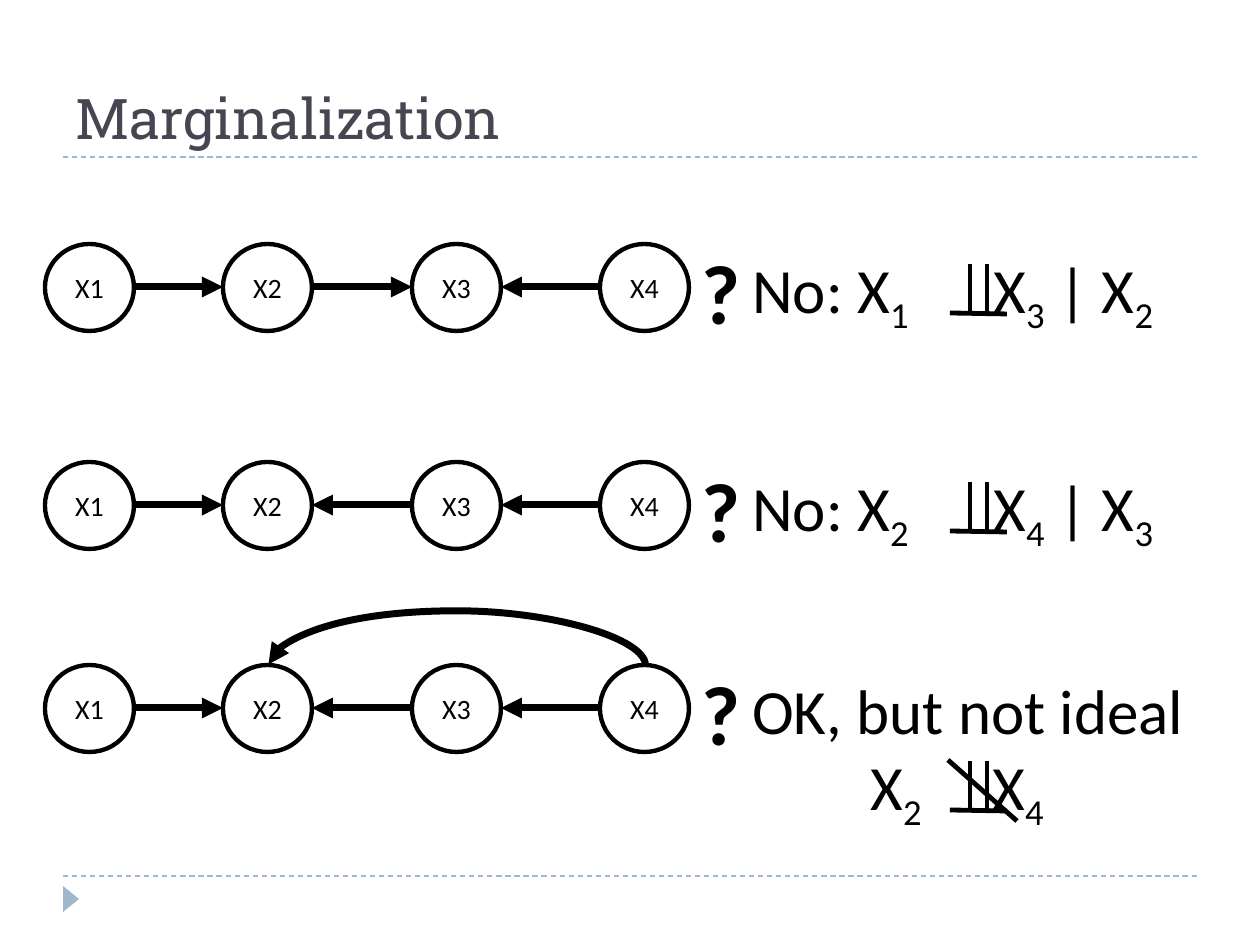
from dataclasses import dataclass

from lxml.etree import SubElement
from pptx import Presentation
from pptx.dml.color import RGBColor
from pptx.enum.dml import MSO_LINE
from pptx.enum.shapes import MSO_CONNECTOR, MSO_SHAPE
from pptx.enum.text import MSO_ANCHOR, PP_ALIGN
from pptx.oxml.ns import qn
from pptx.util import Emu, Pt


@dataclass(frozen=True)
class Theme:
    heading_font: str = "Roboto Slab"
    body_font: str = "Calibri"
    ink: RGBColor = RGBColor(0x00, 0x00, 0x00)
    paper: RGBColor = RGBColor(0xFF, 0xFF, 0xFF)
    heading: RGBColor = RGBColor(0x46, 0x46, 0x53)
    accent: RGBColor = RGBColor(0x9F, 0xB8, 0xCD)
    title_size: int = 32
    answer_size: int = 36
    query_size: int = 48
    node_size: int = 16
    rule_width: float = 0.75
    node_width: float = 2.5
    symbol_width: float = 2.75
    edge_width: float = 4


def px(length):
    return Emu(round(length * 914400 / 126))


class SlideBuilder:
    def __init__(self, page, theme):
        self.page = page
        self.theme = theme

    def span(self, para, text, size, font=None, color=None, bold=None):
        span = para.add_run()
        span.text = text
        span.font.size = Pt(size)
        span.font.name = font or self.theme.body_font
        span.font.color.rgb = color or self.theme.ink
        span.font.bold = bold
        return span

    def text_box(self, left, top, width, height, wrap=True):
        """Add an empty text box and return its text frame."""
        box = self.page.shapes.add_textbox(px(left), px(top), px(width), px(height))
        box.text_frame.word_wrap = wrap
        return box.text_frame

    def title(self, text):
        frame = self.text_box(63, 21, 1134, 136)
        frame.vertical_anchor = MSO_ANCHOR.BOTTOM
        self.span(frame.paragraphs[0], text, self.theme.title_size,
                  self.theme.heading_font, self.theme.heading)

    def answer(self, left, top, width, parts, tab=None):
        """Write parts that alternate between normal text and subscript."""
        para = self.text_box(left, top, width, 89).paragraphs[0]
        if tab:
            stops = SubElement(para._p.get_or_add_pPr(), qn("a:tabLst"))
            SubElement(stops, qn("a:tab"), pos=str(px(tab)), algn="l")
        for index, part in enumerate(parts):
            span = self.span(para, part, self.theme.answer_size)
            if index % 2:
                span.font._element.set("baseline", "-25000")

    def query(self, left, top):
        para = self.text_box(left, top, 57, 115, wrap=False).paragraphs[0]
        self.span(para, "?", self.theme.query_size, bold=True)

    def node(self, left, top, width, height, label):
        circle = self.page.shapes.add_shape(
            MSO_SHAPE.OVAL, px(left), px(top), px(width), px(height))
        circle.shadow.inherit = False
        circle.fill.solid()
        circle.fill.fore_color.rgb = self.theme.paper
        circle.line.color.rgb = self.theme.ink
        circle.line.width = Pt(self.theme.node_width)
        circle.text_frame.vertical_anchor = MSO_ANCHOR.MIDDLE
        para = circle.text_frame.paragraphs[0]
        para.alignment = PP_ALIGN.CENTER
        self.span(para, label, self.theme.node_size)

    def line(self, start, end, width, color=None, arrow=False,
             kind=MSO_CONNECTOR.STRAIGHT):
        line = self.page.shapes.add_connector(
            kind, *(px(value) for value in (*start, *end)))
        line.line.color.rgb = color or self.theme.ink
        line.line.width = Pt(width)
        if arrow:
            SubElement(line.line._get_or_add_ln(), qn("a:tailEnd"), type="triangle")
        SubElement(line._element.spPr, qn("a:effectLst"))
        return line

    def edge(self, start, end):
        self.line(start, end, self.theme.edge_width, arrow=True)

    def arc(self, start_x, end_x, y, rise):
        """Bend an arrow over the nodes, from right to left.

        The connector is one px wide and turned upright, so its
        adjustment is the rise in px.
        """
        middle, half = (start_x + end_x) / 2, (start_x - end_x) / 2
        arc = self.line((middle, y - half), (middle + 1, y + half),
                        self.theme.edge_width, arrow=True, kind=MSO_CONNECTOR.CURVE)
        properties = arc._element.spPr
        frame = properties.find(qn("a:xfrm"))
        frame.set("rot", "16200000")
        frame.set("flipV", "1")
        geometry = properties.find(qn("a:prstGeom"))
        guides = geometry.find(qn("a:avLst"))
        if guides is None:
            guides = SubElement(geometry, qn("a:avLst"))
        SubElement(guides, qn("a:gd"), name="adj1", fmla=f"val {rise * 100000}")

    def rule(self, y):
        rule = self.line((63, y), (1197, y), self.theme.rule_width, self.theme.accent)
        rule.line.dash_style = MSO_LINE.DASH

    def corner_marker(self):
        marker = self.page.shapes.add_shape(
            MSO_SHAPE.ISOSCELES_TRIANGLE, px(58), px(891), px(26), px(16))
        marker.rotation = 90
        marker.shadow.inherit = False
        marker.fill.solid()
        marker.fill.fore_color.rgb = self.theme.accent
        marker.line.fill.background()

    def independence(self, top, negated=False):
        width = self.theme.symbol_width
        for x in (970, 987):
            self.line((x, top + 49), (x, top), width)
        self.line((1007, top + 50), (950, top + 49), width)
        if negated:
            self.line((1017, top + 60), (948, top - 1), width)


NODE_LEFTS = (45, 223, 412, 600)
NODE_WIDTH, NODE_HEIGHT = 89, 87
ANSWER_LEFT, ANSWER_WIDTH = 740, 503


def draw_chain(builder, top, directions):
    """Draw four nodes; each direction is > or < for the edge between two."""
    for number, left in enumerate(NODE_LEFTS, 1):
        builder.node(left, top, NODE_WIDTH, NODE_HEIGHT, f"X{number}")
    y = top + NODE_HEIGHT // 2
    for left, right, direction in zip(NODE_LEFTS, NODE_LEFTS[1:], directions):
        ends = (left + NODE_WIDTH, y), (right, y)
        builder.edge(*(ends if direction == ">" else reversed(ends)))
    builder.query(689, top - 10)


def main():
    deck = Presentation()
    deck.slide_width, deck.slide_height = px(1260), px(945)
    page = deck.slides.add_slide(deck.slide_layouts[6])
    builder = SlideBuilder(page, Theme())

    for y in (876, 157):
        builder.rule(y)
    builder.corner_marker()
    builder.title("Marginalization")

    refuted = (
        (244, ">><", ("1", "3", "2")),
        (462, "><<", ("2", "4", "3")),
    )
    for top, directions, (first, second, given) in refuted:
        draw_chain(builder, top, directions)
        builder.answer(ANSWER_LEFT, top, ANSWER_WIDTH,
                       ("No: X", first, "\tX", second, " | X", given), tab=241)
        builder.independence(top + 20)

    top = 665
    draw_chain(builder, top, "><<")
    builder.arc(645, 268, top, 55)
    builder.answer(ANSWER_LEFT, top, ANSWER_WIDTH, ("OK, but not ideal",))
    builder.answer(858, top + 76, 258, ("X", "2", "\tX", "4"), tab=122)
    builder.independence(top + 96, negated=True)

    deck.save("out.pptx")


if __name__ == "__main__":
    main()
